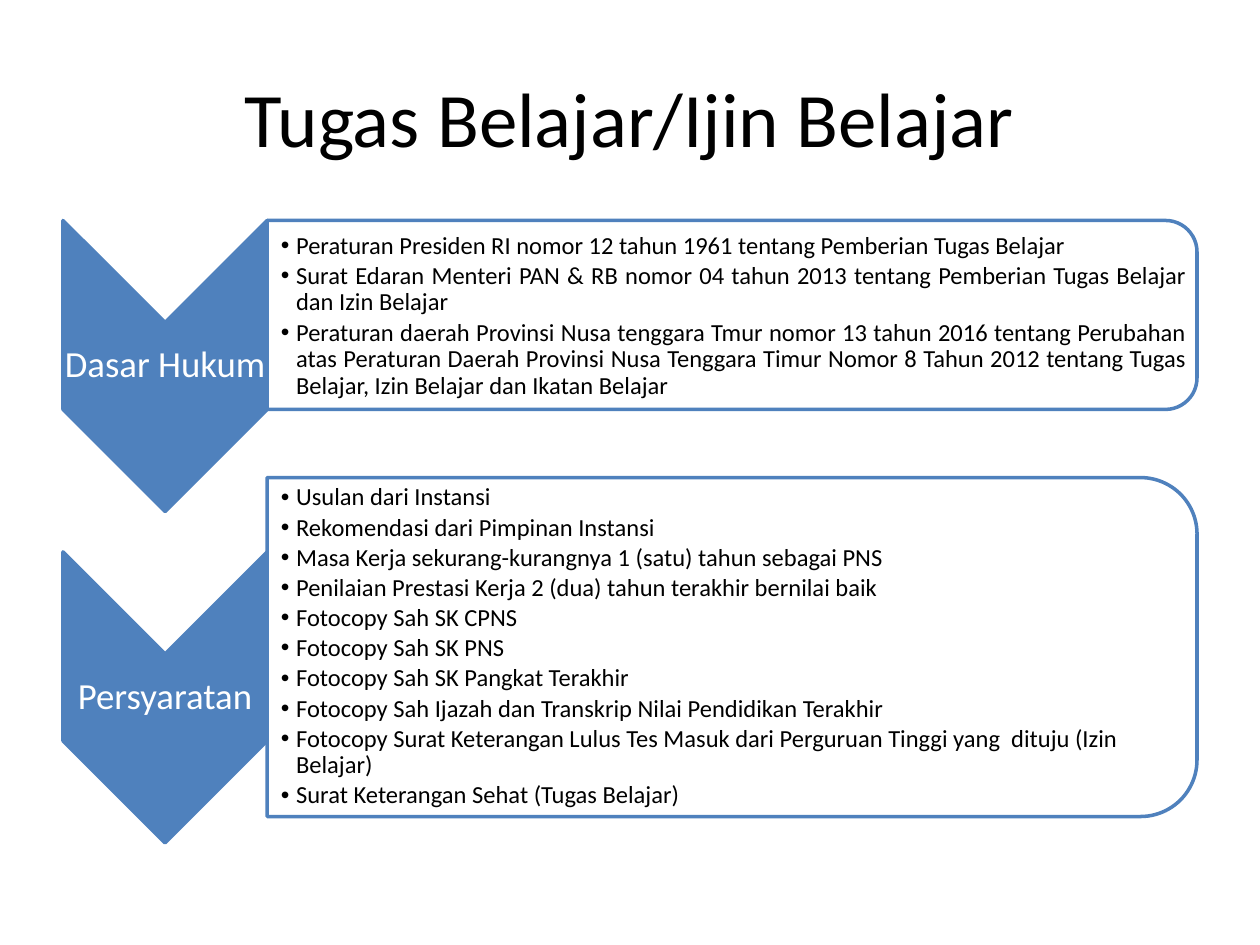
from dataclasses import dataclass

from lxml.etree import SubElement
from pptx import Presentation
from pptx.dml.color import RGBColor
from pptx.enum.shapes import MSO_SHAPE
from pptx.enum.text import MSO_ANCHOR, MSO_AUTO_SIZE, PP_ALIGN
from pptx.oxml.ns import qn
from pptx.util import Inches, Pt


@dataclass(frozen=True)
class Theme:
    """Colours, font and type sizes of the slide."""
    font: str = "Calibri"
    accent: RGBColor = RGBColor(0x4F, 0x81, 0xBD)
    ink: RGBColor = RGBColor(0, 0, 0)
    paper: RGBColor = RGBColor(255, 255, 255)
    title_size: Pt = Pt(44)
    label_size: Pt = Pt(21)
    list_size: Pt = Pt(14)
    outline: Pt = Pt(2)


THEME = Theme()
CHEVRON_LEFT, CHEVRON_WIDTH, CHEVRON_HEIGHT = 0.5, 1.62, 2.31
LABEL_OFFSET, LABEL_HEIGHT = 0.81, 0.69
PANEL_LEFT, PANEL_WIDTH = 2.12, 7.38

LEGAL_BASIS = [
    "Peraturan Presiden RI nomor 12 tahun 1961 tentang Pemberian Tugas Belajar",
    "Surat Edaran Menteri PAN & RB nomor 04 tahun 2013 tentang Pemberian Tugas Belajar dan Izin Belajar",
    "Peraturan daerah Provinsi Nusa tenggara Tmur nomor 13 tahun 2016 tentang Perubahan atas "
    "Peraturan Daerah Provinsi Nusa Tenggara Timur Nomor 8 Tahun 2012 tentang Tugas Belajar, "
    "Izin Belajar dan Ikatan Belajar",
]
REQUIREMENTS = [
    "Usulan dari Instansi",
    "Rekomendasi dari Pimpinan Instansi",
    "Masa Kerja sekurang-kurangnya 1 (satu) tahun sebagai PNS",
    "Penilaian Prestasi Kerja 2 (dua) tahun terakhir bernilai baik",
    "Fotocopy Sah SK CPNS",
    "Fotocopy Sah SK PNS",
    "Fotocopy Sah SK Pangkat Terakhir",
    "Fotocopy Sah Ijazah dan Transkrip Nilai Pendidikan Terakhir",
    "Fotocopy Surat Keterangan Lulus Tes Masuk dari Perguruan Tinggi yang  dituju (Izin Belajar)",
    "Surat Keterangan Sehat (Tugas Belajar)",
]


def place(element, left, top, width, height):
    """Move and size an element, in inches."""
    element.left, element.top = Inches(left), Inches(top)
    element.width, element.height = Inches(width), Inches(height)


def format_runs(paragraph, size, color):
    """Apply the theme font to every run of a paragraph."""
    for run in paragraph.runs:
        run.font.name = THEME.font
        run.font.size = size
        run.font.color.rgb = color


def set_frame(frame, left_inset=0.01):
    """Give a text frame tight insets and middle anchoring."""
    frame.word_wrap = True
    frame.auto_size = MSO_AUTO_SIZE.NONE
    frame.vertical_anchor = MSO_ANCHOR.MIDDLE
    frame.margin_left = Inches(left_inset)
    frame.margin_top = frame.margin_right = frame.margin_bottom = Inches(0.01)


def add_turned_shape(slide, preset, left, top, width, height, fill):
    """Add a preset turned a quarter clockwise that covers the given area."""
    shift = (width - height) / 2
    shape = slide.shapes.add_shape(
        preset, Inches(left + shift), Inches(top - shift), Inches(height), Inches(width))
    shape.rotation = 90
    shape.shadow.inherit = False
    shape.fill.solid()
    shape.fill.fore_color.rgb = fill
    shape.line.color.rgb = THEME.accent
    shape.line.width = THEME.outline
    return shape


def add_chevron(slide, label, top):
    """Add a downward chevron with its label."""
    add_turned_shape(slide, MSO_SHAPE.CHEVRON, CHEVRON_LEFT, top,
                     CHEVRON_WIDTH, CHEVRON_HEIGHT, THEME.accent)
    caption = slide.shapes.add_textbox(
        Inches(CHEVRON_LEFT), Inches(top + LABEL_OFFSET),
        Inches(CHEVRON_WIDTH), Inches(LABEL_HEIGHT))
    set_frame(caption.text_frame)
    caption.text_frame.text = label
    paragraph = caption.text_frame.paragraphs[0]
    paragraph.alignment = PP_ALIGN.CENTER
    paragraph.line_spacing = 0.9
    format_runs(paragraph, THEME.label_size, THEME.paper)


def add_panel(slide, top, height):
    """Add a translucent panel rounded on its right side."""
    panel = add_turned_shape(slide, MSO_SHAPE.ROUND_2_SAME_RECTANGLE, PANEL_LEFT, top,
                             PANEL_WIDTH, height, THEME.paper)
    color = panel.fill._xPr.find(qn("a:solidFill"))[0]
    SubElement(color, qn("a:alpha"), val="90000")


def fill_list(slide, body, items, area, alignment):
    """Write a bulleted list into a body placeholder and bring it to the front."""
    slide.shapes._spTree.append(body._element)
    place(body, *area)
    frame = body.text_frame
    set_frame(frame, left_inset=0.11)
    frame.text = "\n".join(items)
    for paragraph in frame.paragraphs:
        paragraph.level = 1
        paragraph.alignment = alignment
        paragraph.line_spacing = 0.9
        paragraph.space_before = Pt(0)
        paragraph.space_after = Pt(2.1)
        properties = paragraph._p.get_or_add_pPr()
        properties.set("marL", str(Inches(0.12)))
        properties.set("indent", str(-Inches(0.12)))
        SubElement(properties, qn("a:buFont"), typeface="Arial")
        SubElement(properties, qn("a:buChar"), char="•")
        format_runs(paragraph, THEME.list_size, THEME.ink)


def set_title(slide, text):
    """Write the slide title."""
    title = slide.shapes.title
    place(title, 0.5, 0.3, 9, 1.25)
    title.text_frame.text = text
    title.text_frame.vertical_anchor = MSO_ANCHOR.MIDDLE
    paragraph = title.text_frame.paragraphs[0]
    paragraph.alignment = PP_ALIGN.CENTER
    format_runs(paragraph, THEME.title_size, THEME.ink)


def main():
    """Build the slide and save it."""
    presentation = Presentation()
    presentation.slide_width, presentation.slide_height = Inches(10), Inches(7.5)
    slide = presentation.slides.add_slide(presentation.slide_layouts[3])
    set_title(slide, "Tugas Belajar/Ijin Belajar")
    legal_body, requirements_body = slide.placeholders[1], slide.placeholders[2]

    add_chevron(slide, "Dasar Hukum", 1.75)
    add_panel(slide, 1.75, 1.5)
    fill_list(slide, legal_body, LEGAL_BASIS, (PANEL_LEFT, 1.83, 7.31, 1.36), PP_ALIGN.JUSTIFY)

    add_chevron(slide, "Persyaratan", 4.38)
    add_panel(slide, 3.79, 2.69)
    fill_list(slide, requirements_body, REQUIREMENTS, (PANEL_LEFT, 3.92, 7.25, 2.43), PP_ALIGN.LEFT)

    presentation.save("out.pptx")


if __name__ == "__main__":
    main()
